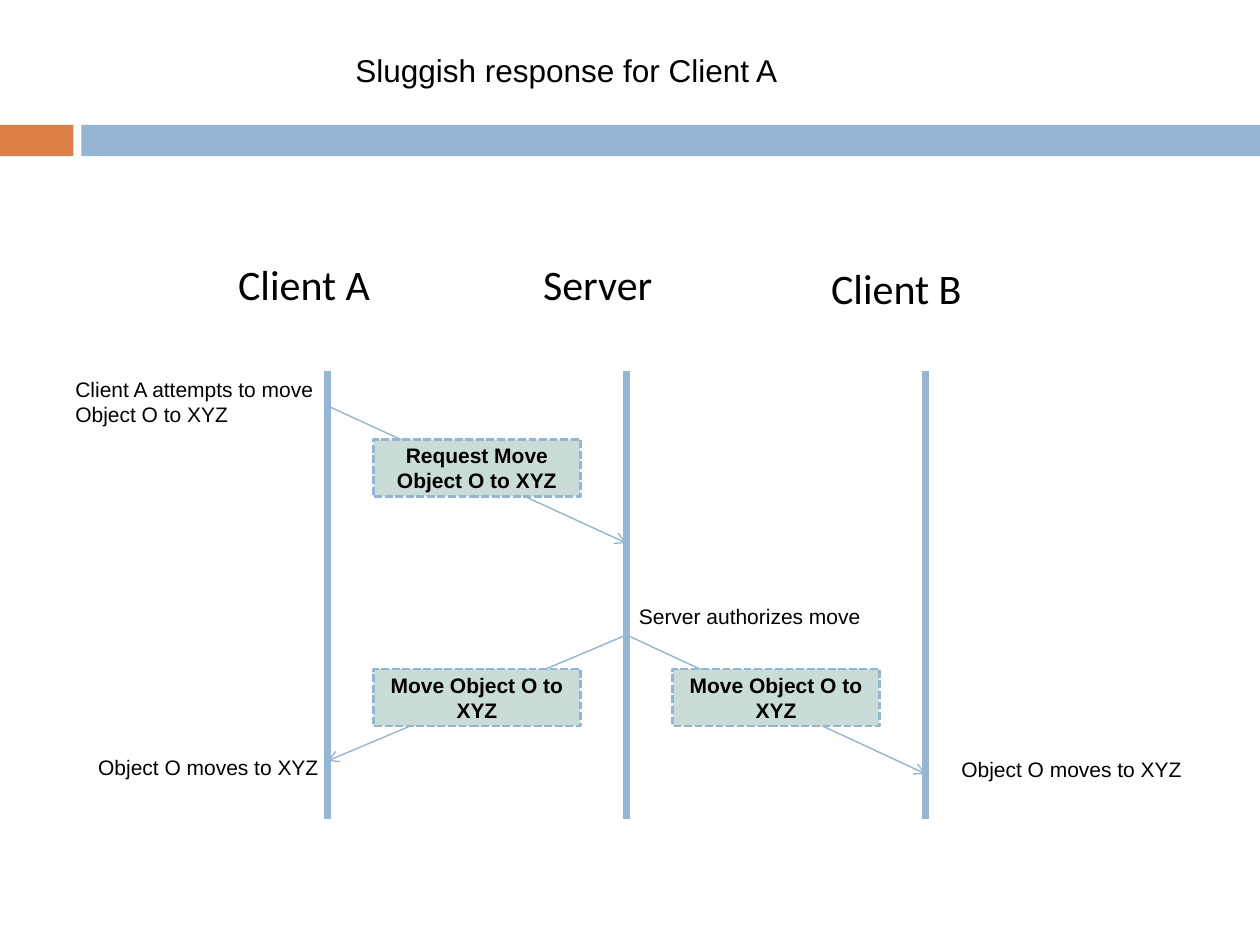
from dataclasses import dataclass

import pptx
import pptx.dml.color
import pptx.enum.dml
import pptx.enum.shapes
import pptx.enum.text
import pptx.oxml
import pptx.oxml.ns
import pptx.shapes.connector
import pptx.slide
import pptx.util

Cm = pptx.util.Cm
Pt = pptx.util.Pt
Color = pptx.dml.color.RGBColor
Align = pptx.enum.text.PP_ALIGN
Anchor = pptx.enum.text.MSO_ANCHOR
Rectangle = pptx.enum.shapes.MSO_SHAPE.RECTANGLE


@dataclass(frozen=True)
class Theme:
    blue: Color = Color(0x94, 0xB6, 0xD2)
    orange: Color = Color(0xDD, 0x80, 0x47)
    message_fill: Color = Color(0xCA, 0xDC, 0xD8)
    text: Color = Color(0, 0, 0)
    body_font: str = "Arial"
    heading_font: str = "Calibri"
    title_size: int = 18
    heading_size: int = 24
    body_size: int = 12
    lifeline_width: float = 4
    arrow_width: float = 0.79
    box_line_width: float = 1.5


@dataclass(frozen=True)
class Lane:
    name: str
    x: float
    heading_center: float
    heading_top: float


@dataclass(frozen=True)
class Message:
    text: str
    source: Lane
    target: Lane
    start: float
    end: float
    box_top: float


@dataclass(frozen=True)
class Note:
    text: str
    left: float
    top: float


THEME = Theme()
LANE_TOP, LANE_BOTTOM = 7.47, 16.51
LANE_LEFT, LANE_GAP = 6.6, 6.03
HEADING_WIDTH, HEADING_HEIGHT = 6.73, 1.28
BOX_WIDTH, BOX_HEIGHT = 4.17, 1.15
NOTE_WIDTH, NOTE_HEIGHT = 5.35, 0.77
BAR_TOP, BAR_HEIGHT = 2.52, 0.63

CLIENT_A = Lane("Client A", LANE_LEFT, 6.13, 5.08)
SERVER = Lane("Server", LANE_LEFT + LANE_GAP, 12.05, 5.08)
CLIENT_B = Lane("Client B", LANE_LEFT + 2 * LANE_GAP, 18.07, 5.16)
LANES = (CLIENT_A, SERVER, CLIENT_B)

MESSAGES = (
    Message("Request Move Object O to XYZ", CLIENT_A, SERVER, 8.18, 10.95, 8.86),
    Message("Move Object O to XYZ", SERVER, CLIENT_A, 12.8, 15.34, 13.49),
    Message("Move Object O to XYZ", SERVER, CLIENT_B, 12.8, 15.6, 13.49),
)

NOTES = (
    Note("Client A attempts to move Object O to XYZ", 1.27, 7.47),
    Note("Object O moves to XYZ", 1.73, 15.09),
    Note("Object O moves to XYZ", 19.13, 15.12),
    Note("Server authorizes move", 12.63, 12.04),
)


def write_text(frame, text: str, size: float, font: str = THEME.body_font,
               align=Align.LEFT, bold: bool = False) -> None:
    frame.word_wrap = True
    frame.text = text
    paragraph = frame.paragraphs[0]
    paragraph.alignment = align
    paragraph.font.size = Pt(size)
    paragraph.font.name = font
    paragraph.font.bold = bold
    paragraph.font.color.rgb = THEME.text


def add_rectangle(slide: pptx.slide.Slide, left: float, top: float,
                  width: float, height: float, color: Color):
    shape = slide.shapes.add_shape(Rectangle, Cm(left), Cm(top), Cm(width), Cm(height))
    shape.shadow.inherit = False
    shape.fill.solid()
    shape.fill.fore_color.rgb = color
    shape.line.fill.background()
    return shape


def add_line(slide: pptx.slide.Slide, start: tuple[float, float],
             end: tuple[float, float], width: float) -> pptx.shapes.connector.Connector:
    line = slide.shapes.add_connector(
        pptx.enum.shapes.MSO_CONNECTOR.STRAIGHT, *map(Cm, start), *map(Cm, end))
    line.line.color.rgb = THEME.blue
    line.line.width = Pt(width)
    properties = line._element.spPr
    properties.append(pptx.oxml.parse_xml(
        f'<a:effectLst {pptx.oxml.ns.nsdecls("a")}/>'))
    return line


def add_arrow(slide: pptx.slide.Slide, message: Message) -> None:
    arrow = add_line(slide, (message.source.x, message.start),
                     (message.target.x, message.end), THEME.arrow_width)
    arrow.line._get_or_add_ln().append(pptx.oxml.parse_xml(
        f'<a:tailEnd {pptx.oxml.ns.nsdecls("a")} type="arrow"/>'))


def add_message_box(slide: pptx.slide.Slide, message: Message) -> None:
    """Place the label midway between the two lanes."""
    center = (message.source.x + message.target.x) / 2
    box = add_rectangle(slide, center - BOX_WIDTH / 2, message.box_top,
                        BOX_WIDTH, BOX_HEIGHT, THEME.message_fill)
    box.line.color.rgb = THEME.blue
    box.line.width = Pt(THEME.box_line_width)
    box.line.dash_style = pptx.enum.dml.MSO_LINE.SQUARE_DOT
    box.text_frame.vertical_anchor = Anchor.MIDDLE
    write_text(box.text_frame, message.text, THEME.body_size,
               align=Align.CENTER, bold=True)


def add_heading(slide: pptx.slide.Slide, lane: Lane) -> None:
    box = slide.shapes.add_textbox(
        Cm(lane.heading_center - HEADING_WIDTH / 2), Cm(lane.heading_top),
        Cm(HEADING_WIDTH), Cm(HEADING_HEIGHT))
    write_text(box.text_frame, lane.name, THEME.heading_size,
               THEME.heading_font, Align.CENTER)


def add_note(slide: pptx.slide.Slide, note: Note) -> None:
    box = slide.shapes.add_textbox(
        Cm(note.left), Cm(note.top), Cm(NOTE_WIDTH), Cm(NOTE_HEIGHT))
    write_text(box.text_frame, note.text, THEME.body_size)


def set_title(slide: pptx.slide.Slide, text: str) -> None:
    title = slide.shapes.title
    title.left, title.top, title.width, title.height = map(Cm, (6.91, 0.91, 9.1, 1.03))
    write_text(title.text_frame, text, THEME.title_size)
    title.text_frame.auto_size = pptx.enum.text.MSO_AUTO_SIZE.NONE
    title.text_frame.vertical_anchor = Anchor.TOP


def main() -> None:
    presentation = pptx.Presentation()
    presentation.slide_width, presentation.slide_height = Cm(25.4), Cm(19.05)
    slide = presentation.slides.add_slide(
        presentation.slide_layouts.get_by_name("Title Only"))

    set_title(slide, "Sluggish response for Client A")
    add_rectangle(slide, 0, BAR_TOP, 1.48, BAR_HEIGHT, THEME.orange)
    add_rectangle(slide, 1.64, BAR_TOP, 23.76, BAR_HEIGHT, THEME.blue)

    for lane in LANES:
        add_line(slide, (lane.x, LANE_TOP), (lane.x, LANE_BOTTOM), THEME.lifeline_width)
        add_heading(slide, lane)
    for message in MESSAGES:
        add_arrow(slide, message)
        add_message_box(slide, message)
    for note in NOTES:
        add_note(slide, note)

    presentation.save("out.pptx")


if __name__ == "__main__":
    main()
